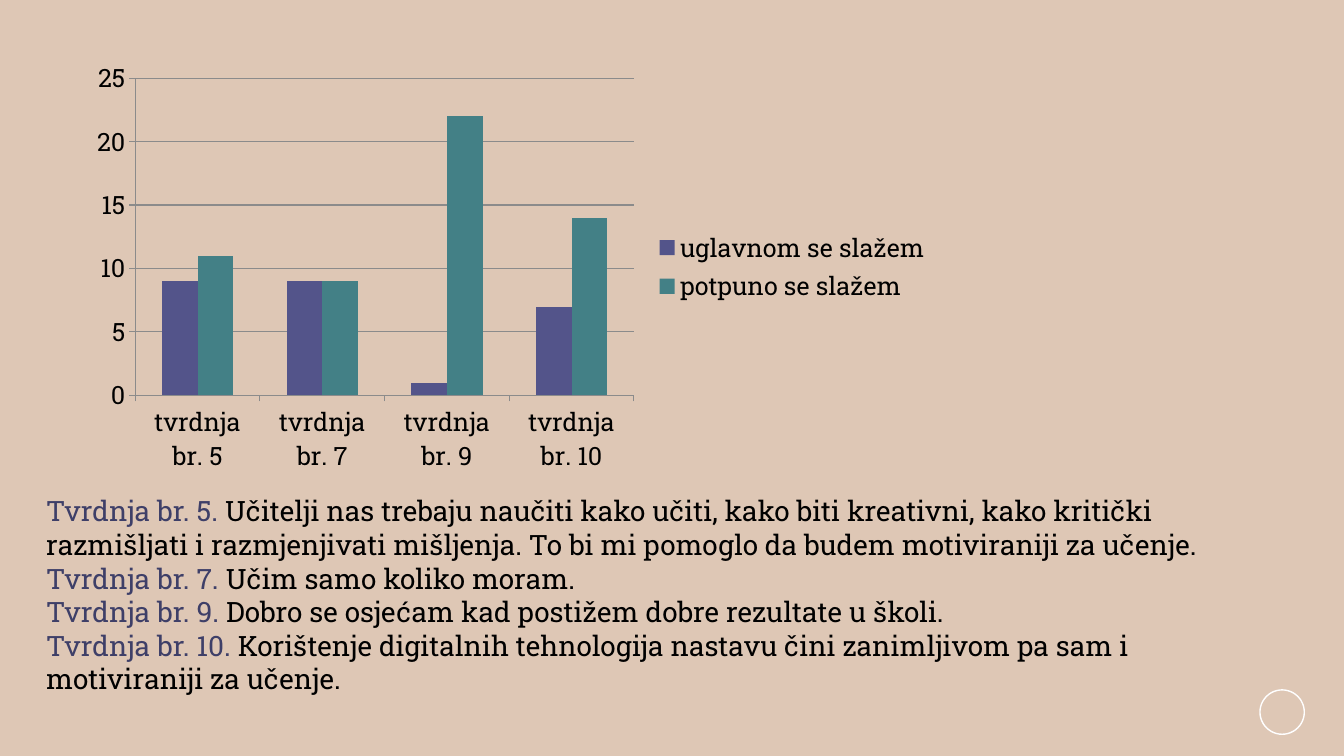
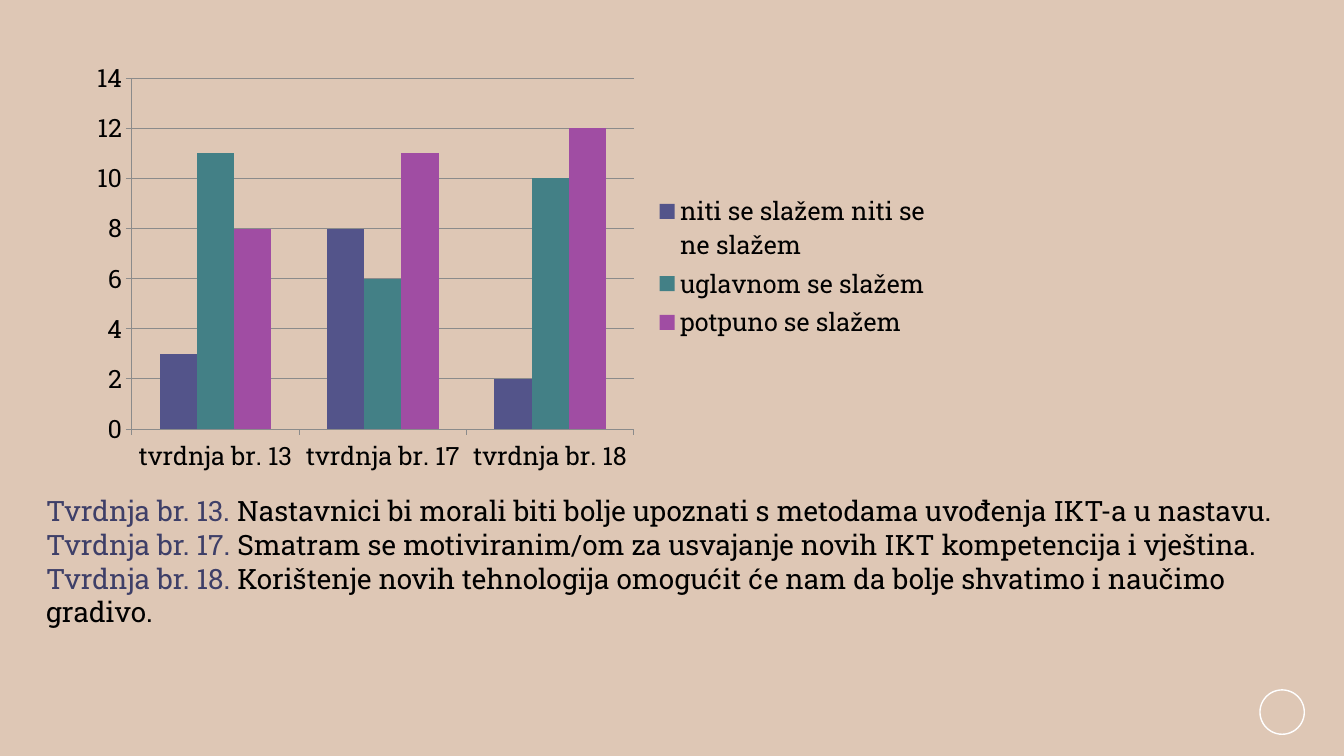
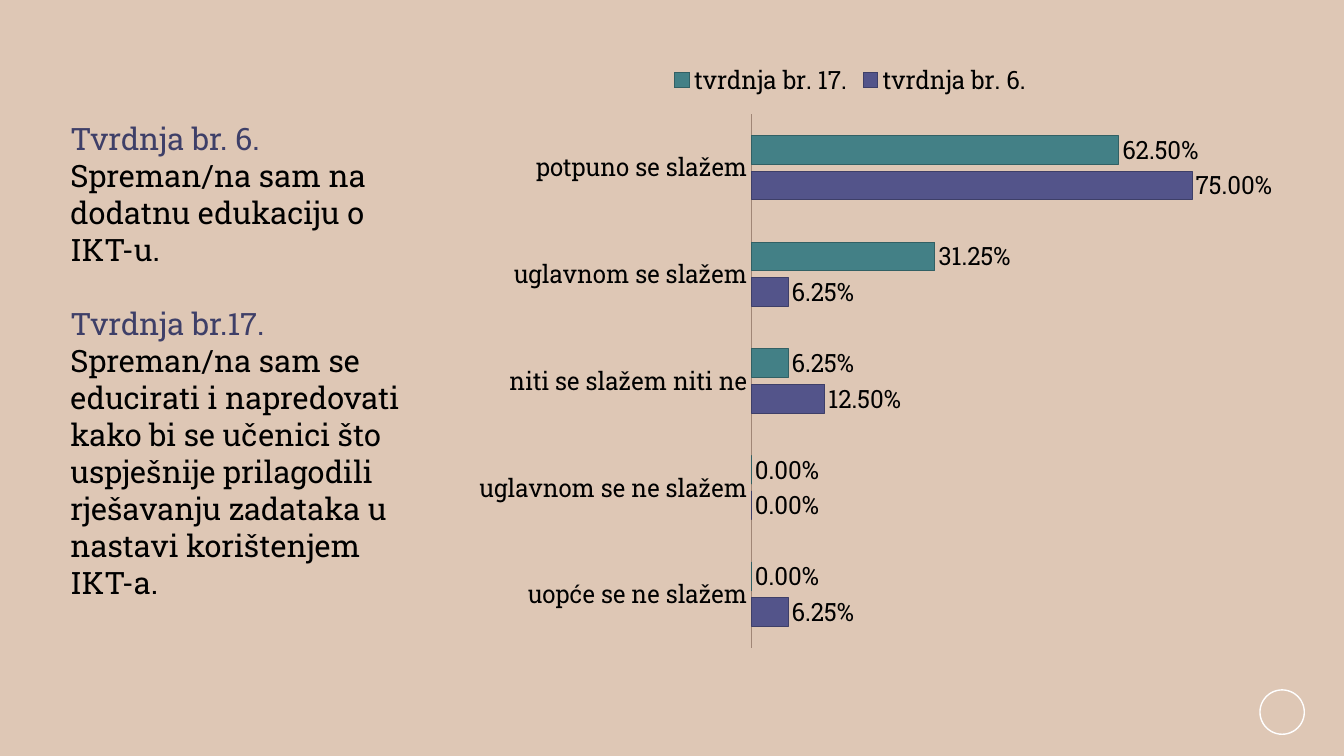
from pptx import Presentation
from pptx.chart.data import CategoryChartData
from pptx.dml.color import RGBColor
from pptx.enum import chart as ch, shapes, text
from pptx.util import Pt

SAND = RGBColor(0xDE, 0xC7, 0xB5)
WHITE = RGBColor(0xFF, 0xFF, 0xFF)
BLACK = RGBColor(0, 0, 0)
GREY = RGBColor(0x8B, 0x8B, 0x8B)
BROWN = RGBColor(0xA0, 0x86, 0x76)
INDIGO = RGBColor(0x53, 0x54, 0x8A)
DARK_INDIGO = RGBColor(0x3E, 0x3F, 0x68)
TEAL = RGBColor(0x43, 0x80, 0x86)
DARK_TEAL = RGBColor(0x32, 0x60, 0x64)
PURPLE = RGBColor(0xA0, 0x4D, 0xA3)
FONT = "Roboto Slab"

# Boxes are left, top, width, height in points
COLUMN_CHART = (56.9, 37.7, 619.9, 306)
COLUMN_NOTES = (25.9, 349.2, 899.3, 152.6)
BAR_CHART = (331.4, 36.4, 577.4, 434.9)
BAR_NOTES = (43.2, 82.1, 270, 353.5)
RING = (900, 492.8, 31.7, 31.7)


def points(box):
    return [Pt(length) for length in box]


def set_font(font, size, color):
    font.name = FONT
    font.size = Pt(size)
    font.color.rgb = color


def add_page(deck):
    """Add a blank page with the corner ring."""
    page = deck.slides.add_slide(deck.slide_layouts[6])
    ring = page.shapes.add_shape(shapes.MSO_SHAPE.OVAL, *points(RING))
    ring.shadow.inherit = False
    ring.fill.background()
    ring.line.color.rgb = WHITE
    ring.line.width = Pt(1)
    return page


def add_statements(page, box, statements, size, gap=0, split=False):
    """Write one paragraph per statement: coloured label, black wording."""
    frame = page.shapes.add_textbox(*points(box)).text_frame
    frame.word_wrap = True
    frame.auto_size = text.MSO_AUTO_SIZE.SHAPE_TO_FIT_TEXT
    for index, (label, wording) in enumerate(statements):
        para = frame.paragraphs[0] if index == 0 else frame.add_paragraph()
        if index and gap:
            para.space_before = Pt(gap)
        span = para.add_run()
        span.text = label if split else label + " "
        set_font(span.font, size, DARK_INDIGO)
        if split:
            para.add_line_break()
        span = para.add_run()
        span.text = wording
        set_font(span.font, size, BLACK)


def add_chart(page, box, kind, categories, series, legend_place):
    """Place a clustered chart; series holds name, colour and values."""
    data = CategoryChartData()
    data.categories = categories
    for name, _, values in series:
        data.add_series(name, values)
    chart = page.shapes.add_chart(kind, *points(box), data).chart
    set_font(chart.font, 18, BLACK)
    chart.has_title = False
    chart.has_legend = True
    chart.legend.position = legend_place
    chart.legend.include_in_layout = False
    set_font(chart.legend.font, 18, BLACK)
    plot = chart.plots[0]
    plot.gap_width = 150
    plot.vary_by_categories = False
    for bars, (_, color, _) in zip(plot.series, series):
        bars.format.fill.solid()
        bars.format.fill.fore_color.rgb = color
        bars.invert_if_negative = False
    return chart


def column_page(page, categories, series, statements):
    chart = add_chart(page, COLUMN_CHART, ch.XL_CHART_TYPE.COLUMN_CLUSTERED,
                      categories, series, ch.XL_LEGEND_POSITION.RIGHT)
    chart.plots[0].overlap = 0
    for axis in (chart.category_axis, chart.value_axis):
        axis.major_tick_mark = ch.XL_TICK_MARK.OUTSIDE
        axis.format.line.color.rgb = GREY
    chart.value_axis.has_major_gridlines = True
    chart.value_axis.major_gridlines.format.line.color.rgb = GREY
    add_statements(page, COLUMN_NOTES, statements, 20)


def bar_page(page, categories, series, outlines, statements):
    chart = add_chart(page, BAR_CHART, ch.XL_CHART_TYPE.BAR_CLUSTERED,
                      categories, series, ch.XL_LEGEND_POSITION.TOP)
    chart.plots[0].overlap = -25
    chart.category_axis.major_tick_mark = ch.XL_TICK_MARK.NONE
    chart.category_axis.format.line.color.rgb = BROWN
    chart.value_axis.has_major_gridlines = False
    chart.value_axis.visible = False
    # Outlines and percentage labels
    for bars, outline in zip(chart.plots[0].series, outlines):
        bars.format.line.color.rgb = outline
        bars.format.line.width = Pt(0.5)
        labels = bars.data_labels
        labels.show_value = True
        labels.number_format = "0.00%"
        labels.number_format_is_linked = False
        labels.position = ch.XL_LABEL_POSITION.OUTSIDE_END
        set_font(labels.font, 18, BLACK)
    add_statements(page, BAR_NOTES, statements, 22, gap=26.4, split=True)


def main():
    deck = Presentation()
    deck.slide_width, deck.slide_height = Pt(960), Pt(540)
    background = deck.slide_master.background.fill
    background.solid()
    background.fore_color.rgb = SAND

    column_page(
        add_page(deck),
        ["tvrdnja br. 5", "tvrdnja br. 7", "tvrdnja br. 9", "tvrdnja br. 10"],
        [("uglavnom se slažem ", INDIGO, (9, 9, 1, 7)),
         ("potpuno se slažem", TEAL, (11, 9, 22, 14))],
        [("Tvrdnja br. 5.",
          "Učitelji nas trebaju naučiti kako učiti, kako biti kreativni, "
          "kako kritički razmišljati i razmjenjivati mišljenja. "
          "To bi mi pomoglo da budem motiviraniji za učenje."),
         ("Tvrdnja br. 7.", "Učim samo koliko moram."),
         ("Tvrdnja br. 9.",
          "Dobro se osjećam kad postižem dobre rezultate u školi."),
         ("Tvrdnja br. 10.",
          "Korištenje digitalnih tehnologija nastavu čini zanimljivom "
          "pa sam i motiviraniji za učenje.")])

    column_page(
        add_page(deck),
        ["tvrdnja br. 13", "tvrdnja br. 17", "tvrdnja br. 18"],
        [("niti se slažem niti se ne slažem", INDIGO, (3, 8, 2)),
         ("uglavnom se slažem ", TEAL, (11, 6, 10)),
         ("potpuno se slažem", PURPLE, (8, 11, 12))],
        [("Tvrdnja br. 13.",
          "Nastavnici bi morali biti bolje upoznati s metodama uvođenja "
          "IKT-a u nastavu."),
         ("Tvrdnja br. 17.",
          "Smatram se motiviranim/om za usvajanje novih IKT kompetencija "
          "i vještina."),
         ("Tvrdnja br. 18.",
          "Korištenje novih tehnologija omogućit će nam da bolje shvatimo "
          "i naučimo gradivo.")])

    bar_page(
        add_page(deck),
        ["uopće se ne slažem", "uglavnom se ne slažem",
         "niti se slažem niti ne", "uglavnom se slažem", "potpuno se slažem"],
        [("tvrdnja br. 6.", INDIGO, (0.0625, 0, 0.125, 0.0625, 0.75)),
         ("tvrdnja br. 17.", TEAL, (0, 0, 0.0625, 0.3125, 0.625))],
        [DARK_INDIGO, DARK_TEAL],
        [("Tvrdnja br. 6.", "Spreman/na sam na dodatnu edukaciju o IKT-u."),
         ("Tvrdnja br.17.",
          "Spreman/na sam se educirati i napredovati kako bi se učenici što "
          "uspješnije prilagodili rješavanju zadataka u nastavi korištenjem "
          "IKT-a.")])

    deck.save("out.pptx")


if __name__ == "__main__":
    main()
